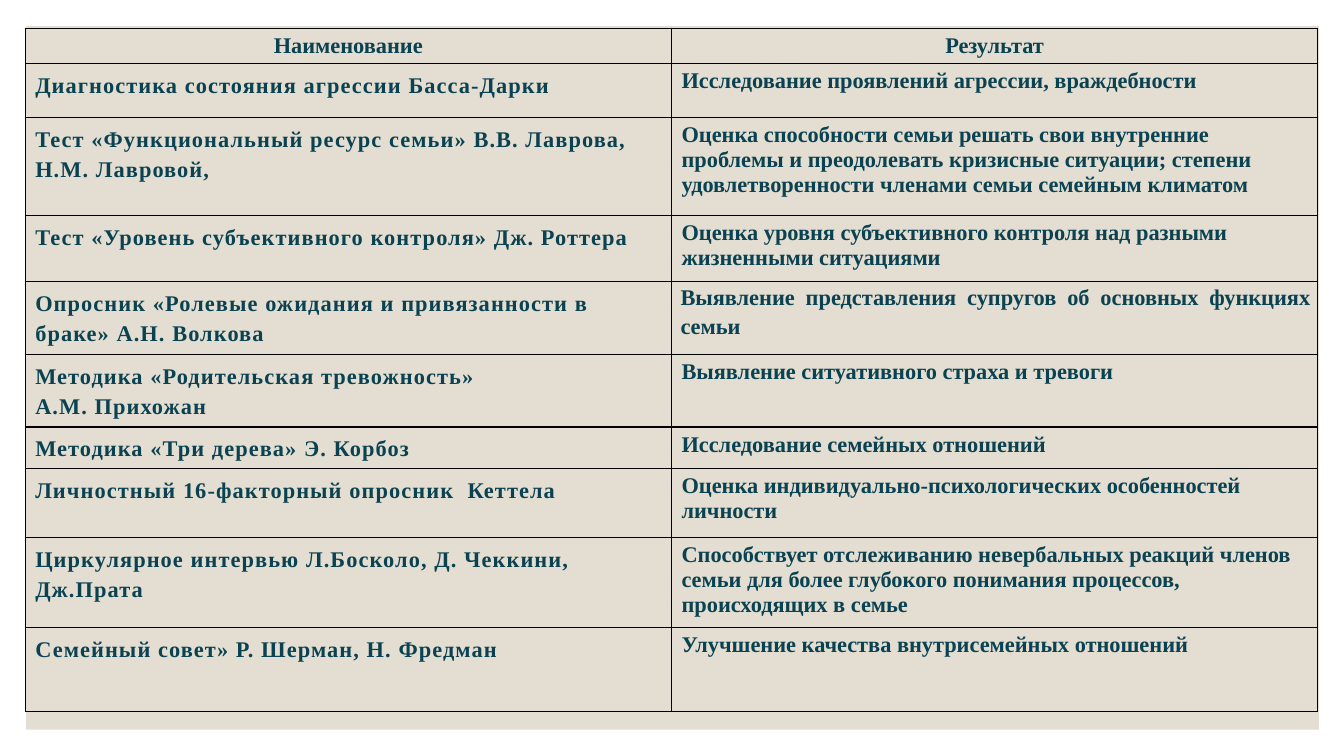
from dataclasses import dataclass

from lxml.etree import SubElement
from pptx import Presentation
from pptx.dml.color import RGBColor
from pptx.enum.shapes import MSO_SHAPE
from pptx.enum.text import PP_ALIGN
from pptx.oxml.ns import qn
from pptx.util import Inches, Pt


@dataclass(frozen=True)
class Theme:
    """Colours, font and sizes of the slide."""
    panel: RGBColor = RGBColor(0xE3, 0xDE, 0xD1)
    text: RGBColor = RGBColor(0x0A, 0x42, 0x52)
    border: str = "000000"
    border_width: float = 1
    font: str = "Times New Roman"
    size: float = 16
    method_tracking: int = 80
    method_spacing: float = 1.2


THEME = Theme()
SLIDE_SIZE = (13.33, 7.5)
PANEL_BOX = (0.26, 0.26, 12.82, 6.98)
TABLE_BOX = (0.25, 0.28, 12.82, 6.77)
ROW_HEIGHTS = (0.34, 0.54, 0.97, 0.66, 0.72, 0.72, 0.41, 0.69, 0.89, 0.83)
HEADER = ("Наименование", "Результат")
JUSTIFIED_ROW = 4
METHODS = (
    ("Диагностика состояния агрессии Басса-Дарки",
     "Исследование проявлений агрессии, враждебности"),
    ("Тест «Функциональный ресурс семьи» В.В. Лаврова, Н.М. Лавровой,",
     "Оценка способности семьи решать свои внутренние проблемы и преодолевать "
     "кризисные ситуации; степени удовлетворенности членами семьи семейным климатом"),
    ("Тест «Уровень субъективного контроля» Дж. Роттера",
     "Оценка уровня субъективного контроля над разными жизненными ситуациями"),
    ("Опросник «Ролевые ожидания и привязанности в браке» А.Н. Волкова",
     "Выявление представления супругов об основных функциях семьи"),
    ("Методика «Родительская тревожность»\nА.М. Прихожан",
     "Выявление ситуативного страха и тревоги"),
    ("Методика «Три дерева» Э. Корбоз",
     "Исследование семейных отношений"),
    ("Личностный 16-факторный опросник  Кеттела",
     "Оценка индивидуально-психологических особенностей личности"),
    ("Циркулярное интервью Л.Босколо, Д. Чеккини, Дж.Прата",
     "Способствует отслеживанию невербальных реакций членов семьи для более "
     "глубокого понимания процессов, происходящих в семье"),
    ("Семейный совет» Р. Шерман, Н. Фредман",
     "Улучшение качества внутрисемейных отношений"),
)


def write_text(text_frame, text, align=PP_ALIGN.LEFT, spacing=1.0, tracking=0):
    """Fill a text frame with one formatted paragraph per line of text."""
    text_frame.text = text
    for paragraph in text_frame.paragraphs:
        paragraph.alignment = align
        paragraph.line_spacing = spacing
        for run in paragraph.runs:
            run.font.name = THEME.font
            run.font.size = Pt(THEME.size)
            run.font.bold = True
            run.font.color.rgb = THEME.text
            run.font._element.set("spc", str(tracking))


def style_cell(cell):
    """Give a cell thin borders on all sides and no fill of its own."""
    properties = cell._tc.get_or_add_tcPr()
    for side in ("a:lnL", "a:lnR", "a:lnT", "a:lnB"):
        line = SubElement(properties, qn(side), w=str(Pt(THEME.border_width)))
        fill = SubElement(line, qn("a:solidFill"))
        SubElement(fill, qn("a:srgbClr"), val=THEME.border)
    cell.fill.background()


def add_panel(slide, box):
    """Draw the plain panel behind the table."""
    panel = slide.shapes.add_shape(MSO_SHAPE.RECTANGLE, *map(Inches, box))
    panel.shadow.inherit = False
    panel.fill.solid()
    panel.fill.fore_color.rgb = THEME.panel
    panel.line.fill.background()


def add_methods_table(slide, box):
    """Place the table of methods and results in the given box."""
    left, top, width, height = box
    rows = (HEADER,) + METHODS
    frame = slide.shapes.add_table(len(rows), len(HEADER), *map(Inches, box))
    table = frame.table
    for column in table.columns:
        column.width = Inches(width / len(HEADER))
    for row, share in zip(table.rows, ROW_HEIGHTS):
        row.height = Inches(height * share / sum(ROW_HEIGHTS))
    for row_index, (method, result) in enumerate(rows):
        method_cell, result_cell = table.rows[row_index].cells
        style_cell(method_cell)
        style_cell(result_cell)
        if row_index == 0:
            write_text(method_cell.text_frame, method, align=PP_ALIGN.CENTER)
            write_text(result_cell.text_frame, result, align=PP_ALIGN.CENTER)
            continue
        write_text(method_cell.text_frame, method, spacing=THEME.method_spacing,
                   tracking=THEME.method_tracking)
        if row_index == JUSTIFIED_ROW:
            write_text(result_cell.text_frame, result, align=PP_ALIGN.JUSTIFY, spacing=1.15)
            result_cell.margin_left = Inches(0.09)
            result_cell.margin_right = Inches(0.07)
            result_cell.margin_top = result_cell.margin_bottom = 0
        else:
            write_text(result_cell.text_frame, result)


def main():
    """Build and save the presentation."""
    presentation = Presentation()
    presentation.slide_width, presentation.slide_height = map(Inches, SLIDE_SIZE)
    slide = presentation.slides.add_slide(presentation.slide_layouts[6])
    add_panel(slide, PANEL_BOX)
    add_methods_table(slide, TABLE_BOX)
    presentation.save("out.pptx")


if __name__ == "__main__":
    main()
